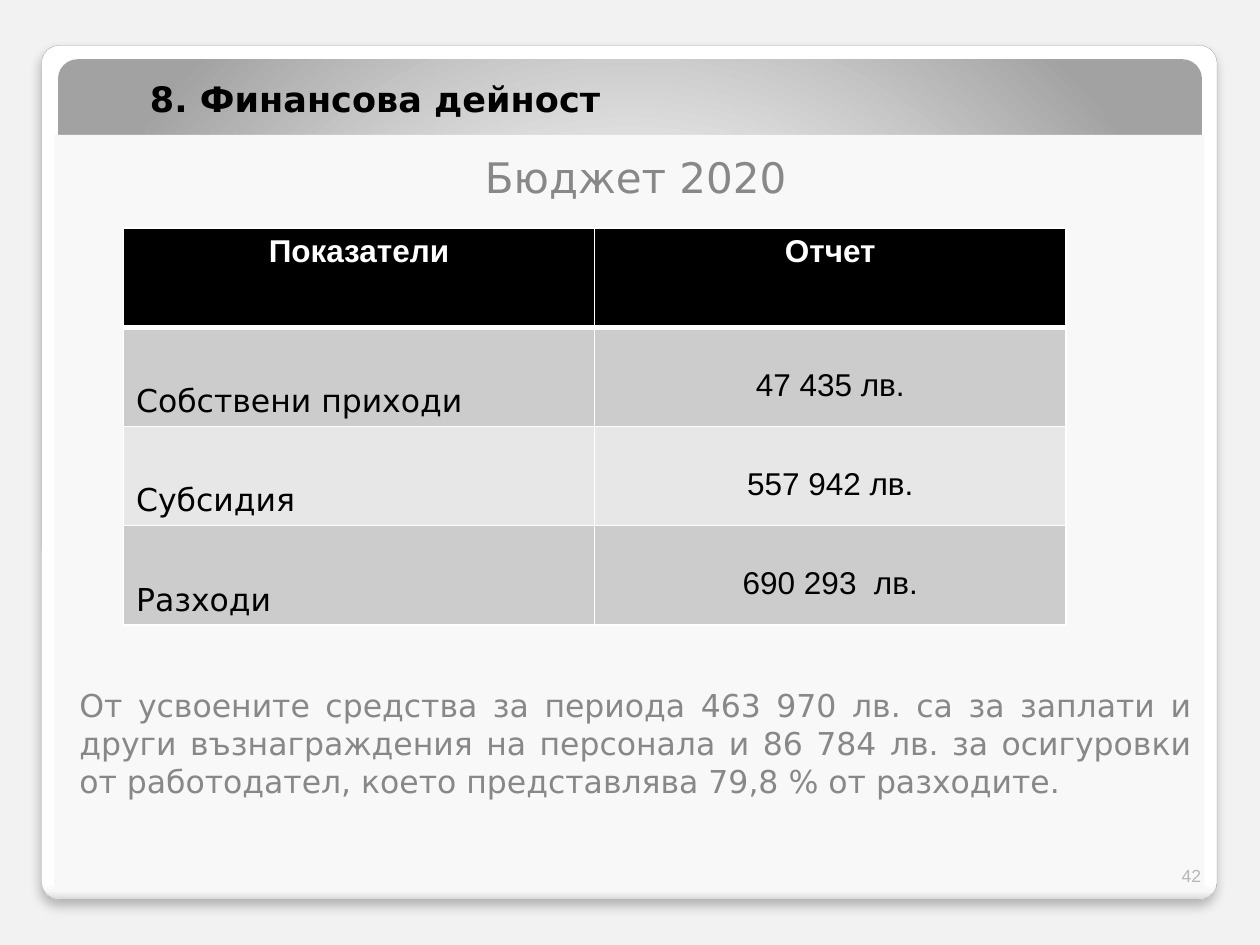
from dataclasses import dataclass

from pptx import Presentation
from pptx import util as u
from pptx.dml.color import RGBColor
from pptx.enum import shapes, text
from pptx.oxml import parse_xml
from pptx.oxml.ns import nsdecls, qn


@dataclass(frozen=True)
class Theme:
    sans: str = "DejaVu Sans"
    figures: str = "Arial"
    page: str = "F2F2F2"
    panel: str = "F8F8F8"
    white: str = "FFFFFF"
    black: str = "000000"
    muted: str = "888888"
    number: str = "B7B7B7"
    edge: str = "A4A4A4"
    bands: tuple = ("CCCCCC", "E7E7E7")
    heading_size: int = 24
    title_size: int = 20
    body_size: int = 18
    number_size: int = 10


theme = Theme()


def style(paragraph, font, size, color, align, bold=False):
    paragraph.alignment = align
    for run in paragraph.runs:
        run.font.name = font
        run.font.size = u.Pt(size)
        run.font.bold = bold
        run.font.color.rgb = RGBColor.from_string(color)


def rounded_panel(box, radius, stops, direction):
    """Add a borderless rounded rectangle with a gradient of (percent, colour) stops."""
    panel = slide.shapes.add_shape(
        shapes.MSO_SHAPE.ROUNDED_RECTANGLE, *(u.Inches(v) for v in box))
    panel.adjustments[0] = radius
    panel.shadow.inherit = False
    panel.line.fill.background()
    panel.fill.gradient()
    marks = "".join(f'<a:gs pos="{pos * 1000}"><a:srgbClr val="{color}"/></a:gs>'
                    for pos, color in stops)
    gradient = panel._element.spPr.find(qn("a:gradFill"))
    gradient.getparent().replace(gradient, parse_xml(
        f'<a:gradFill {nsdecls("a")} rotWithShape="1">'
        f"<a:gsLst>{marks}</a:gsLst>{direction}</a:gradFill>"))
    return panel


prs = Presentation()
prs.slide_width, prs.slide_height = u.Inches(10), u.Inches(7.5)
slide = prs.slides.add_slide(prs.slide_layouts[5])
slide.background.fill.solid()
slide.background.fill.fore_color.rgb = RGBColor.from_string(theme.page)

# Framed card and its shaded header
card = rounded_panel(
    (0.33, 0.36, 9.33, 6.78), 0.021,
    [(0, theme.white), (98, theme.white), (99, "F7F7F7"), (100, "DADADA")],
    '<a:lin ang="5400000" scaled="0"/>')
card.line.color.rgb = RGBColor.from_string(theme.edge)
card.line.width = u.Pt(0.16)
card._element.spPr.find(qn("a:effectLst")).append(parse_xml(
    f'<a:outerShdw {nsdecls("a")} blurRad="{u.Pt(6)}" dist="{u.Pt(4)}" dir="5400000" '
    f'rotWithShape="0"><a:srgbClr val="{theme.black}"><a:alpha val="25000"/>'
    "</a:srgbClr></a:outerShdw>"))
rounded_panel(
    (0.46, 0.47, 9.08, 3.4), 0.046,
    [(0, theme.white), (55, "E1E1E1"), (100, "A2A2A2")],
    '<a:path path="circle"><a:fillToRect l="50000" t="175000" r="50000" b="-75000"/></a:path>')

# Budget heading and commentary, with room between them for the table
budget = slide.shapes.add_shape(
    shapes.MSO_SHAPE.RECTANGLE, u.Inches(0.43), u.Inches(1.07), u.Inches(9.13), u.Inches(6.01))
budget.shadow.inherit = False
budget.line.fill.background()
budget.fill.solid()
budget.fill.fore_color.rgb = RGBColor.from_string(theme.panel)
frame = budget.text_frame
frame.word_wrap = True
frame.vertical_anchor = text.MSO_ANCHOR.TOP
frame.margin_left, frame.margin_top = u.Inches(0.2), u.Inches(0.13)
frame.text = "Бюджет 2020"
style(frame.paragraphs[0], theme.sans, theme.heading_size, theme.muted, text.PP_ALIGN.CENTER)
commentary = frame.add_paragraph()
commentary.text = (
    "От усвоените средства за периода 463 970 лв. са за заплати и други възнаграждения "
    "на персонала и 86 784 лв. за осигуровки от работодател, което представлява 79,8 % "
    "от разходите.")
commentary.space_before = u.Pt(277)
style(commentary, theme.sans, theme.body_size, theme.muted, text.PP_ALIGN.JUSTIFY)

title = slide.shapes.title
slide.shapes._spTree.append(title._element)
title.left, title.top = u.Inches(0.59), u.Inches(0.56)
title.width, title.height = u.Inches(8.9), u.Inches(0.44)
title.text_frame.text = "8. Финансова дейност"
title.text_frame.auto_size = text.MSO_AUTO_SIZE.NONE
title.text_frame.vertical_anchor = text.MSO_ANCHOR.MIDDLE
title.text_frame.margin_left = u.Inches(0.6)
style(title.text_frame.paragraphs[0], theme.sans, theme.title_size, theme.black,
      text.PP_ALIGN.LEFT, bold=True)

page_number = slide.shapes.add_textbox(
    u.Inches(9.13), u.Inches(6.68), u.Inches(0.5), u.Inches(0.4))
page_number.text_frame.word_wrap = True
page_number.text_frame.vertical_anchor = text.MSO_ANCHOR.BOTTOM
page_number.text_frame.text = "42"
style(page_number.text_frame.paragraphs[0], theme.figures, theme.number_size, theme.number,
      text.PP_ALIGN.RIGHT)

# Budget table
indicators = [
    ("Показатели", "Отчет"),
    ("Собствени приходи", "47 435 лв."),
    ("Субсидия", "557 942 лв."),
    ("Разходи", "690 293  лв."),
]
table = slide.shapes.add_table(
    len(indicators), 2, u.Inches(0.98), u.Inches(1.81), u.Inches(7.48), u.Inches(3.15)).table
for r, record in enumerate(indicators):
    for c, wording in enumerate(record):
        cell = table.cell(r, c)
        cell.text = wording
        paragraph = cell.text_frame.paragraphs[0]
        if r == 0:
            fill = theme.black
            style(paragraph, theme.figures, theme.body_size, theme.white,
                  text.PP_ALIGN.CENTER, bold=True)
        else:
            fill = theme.bands[(r - 1) % 2]
            if c == 0:
                cell.vertical_anchor = text.MSO_ANCHOR.BOTTOM
                style(paragraph, theme.sans, theme.body_size, theme.black, text.PP_ALIGN.LEFT)
            else:
                cell.margin_top = u.Inches(0.32)
                style(paragraph, theme.figures, theme.body_size, theme.black,
                      text.PP_ALIGN.CENTER)
        properties = cell._tc.get_or_add_tcPr()
        for side in ("lnL", "lnR", "lnT", "lnB"):
            header_rule = (r, side) in ((0, "lnB"), (1, "lnT"))
            properties.append(parse_xml(
                f'<a:{side} {nsdecls("a")} w="{u.Pt(3 if header_rule else 1)}"><a:solidFill>'
                f'<a:srgbClr val="{theme.white}"/></a:solidFill></a:{side}>'))
        cell.fill.solid()
        cell.fill.fore_color.rgb = RGBColor.from_string(fill)

prs.save("out.pptx")
